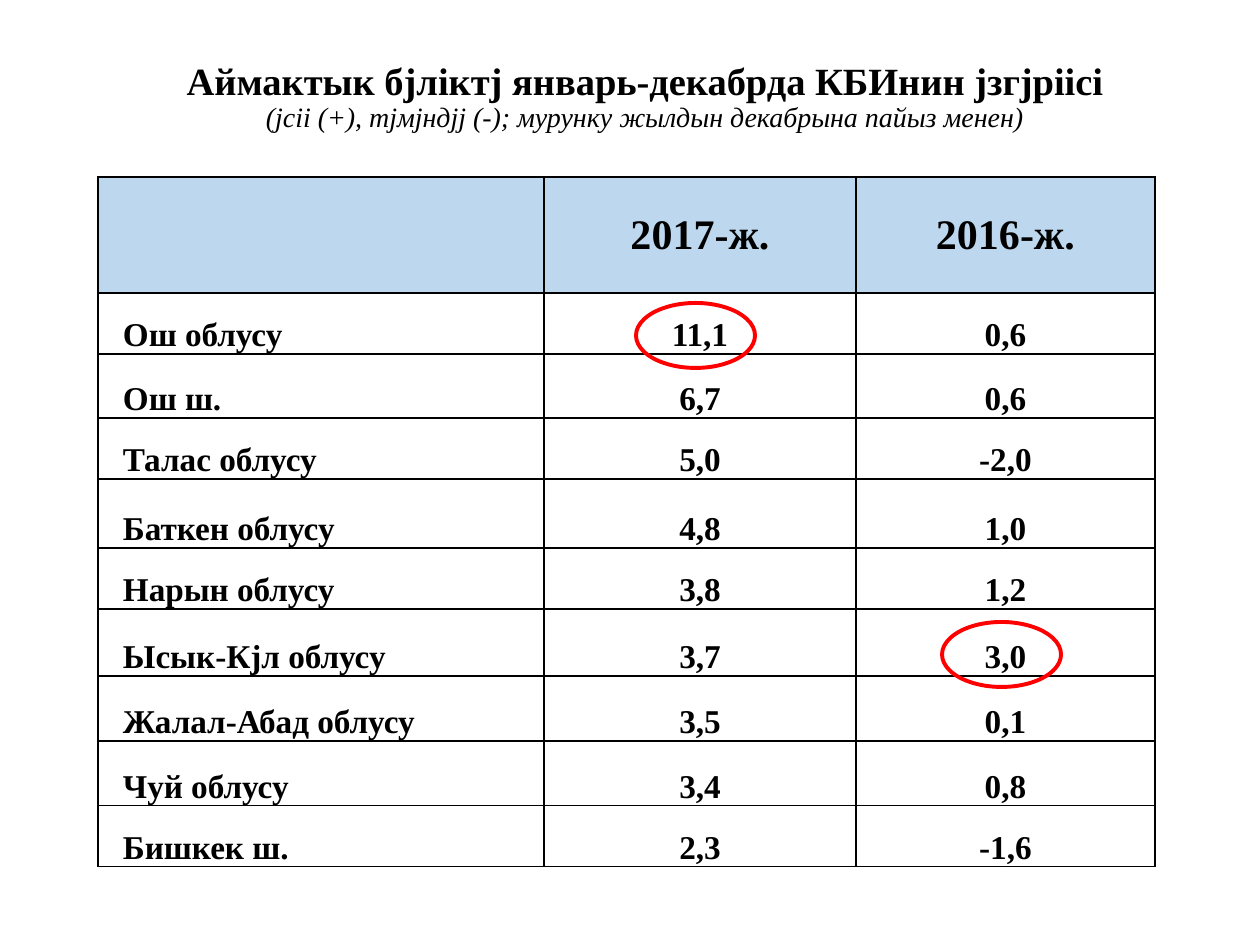
"""Build a slide with a regional CPI table and two highlighted values."""
from dataclasses import dataclass

from lxml import etree
from pptx import Presentation
from pptx import util as u
from pptx.dml.color import RGBColor
from pptx.enum import shapes, text
from pptx.oxml.ns import qn


@dataclass(frozen=True)
class Theme:
    font: str = "Times New Roman"
    ink: str = "000000"
    header: str = "BDD7EE"
    accent: str = "FF0000"
    title: int = 22
    subtitle: int = 16
    head: int = 24
    body: int = 19
    border: float = 1
    ring: float = 2.25


T = Theme()
COLS = [446, 312, 299]
ROWS = [116, 61, 64, 61, 69, 61, 67, 65, 65, 61]
DATA = [
    ("", "2017-ж.", "2016-ж."),
    ("Ош облусу", "11,1", "0,6"),
    ("Ош ш.", "6,7", "0,6"),
    ("Талас облусу", "5,0", "-2,0"),
    ("Баткен облусу", "4,8", "1,0"),
    ("Нарын облусу", "3,8", "1,2"),
    ("Ысык-Кјл облусу", "3,7", "3,0"),
    ("Жалал-Абад облусу", "3,5", "0,1"),
    ("Чуй облусу", "3,4", "0,8"),
    ("Бишкек ш.", "2,3", "-1,6"),
]


def px(n):
    return u.Emu(round(n * 914400 / 126))


def style(font, size, bold=True, italic=False):
    font.name, font.size = T.font, u.Pt(size)
    font.bold, font.italic = bold, italic
    font.color.rgb = RGBColor.from_string(T.ink)


def add_title(s, box, heading, note):
    sp = s.shapes.title
    sp.left, sp.top, sp.width, sp.height = map(px, box)
    tf = sp.text_frame
    tf.word_wrap = True
    tf.auto_size = text.MSO_AUTO_SIZE.NONE
    tf.vertical_anchor = text.MSO_ANCHOR.MIDDLE
    p = tf.paragraphs[0]
    p.alignment, p.line_spacing = text.PP_ALIGN.CENTER, 0.9
    r = p.add_run()
    r.text = heading
    style(r.font, T.title)
    p.add_line_break()
    r = p.add_run()
    r.text = note
    style(r.font, T.subtitle, bold=False, italic=True)


def set_borders(cell):
    tc_pr = cell._tc.get_or_add_tcPr()
    for i, side in enumerate(("lnL", "lnR", "lnT", "lnB")):
        ln = etree.Element(qn(f"a:{side}"), w=str(u.Pt(T.border)))
        fill = etree.SubElement(ln, qn("a:solidFill"))
        etree.SubElement(fill, qn("a:srgbClr"), val=T.ink)
        tc_pr.insert(i, ln)


def fill_cell(cell, value, is_head, is_label):
    cell.text = value
    p = cell.text_frame.paragraphs[0]
    style(p.font, T.head if is_head else T.body)
    p.alignment = text.PP_ALIGN.LEFT if is_label else text.PP_ALIGN.CENTER
    if is_head:
        cell.vertical_anchor = text.MSO_ANCHOR.MIDDLE
        cell.fill.solid()
        cell.fill.fore_color.rgb = RGBColor.from_string(T.header)
    else:
        cell.vertical_anchor = text.MSO_ANCHOR.BOTTOM
        cell.margin_left = px(25 if is_label else 0)
        cell.margin_right = cell.margin_top = cell.margin_bottom = 0
        p.space_after = u.Pt(2)
        cell.fill.background()
    set_borders(cell)


def add_table(s, left, top):
    frame = s.shapes.add_table(len(ROWS), len(COLS), px(left), px(top),
                               px(sum(COLS)), px(sum(ROWS)))
    table = frame.table
    table.first_row = table.horz_banding = False
    for col, width in zip(table.columns, COLS):
        col.width = px(width)
    for row, height in zip(table.rows, ROWS):
        row.height = px(height)
    for i, values in enumerate(DATA):
        for j, value in enumerate(values):
            fill_cell(table.cell(i, j), value, i == 0, j == 0)


def add_ring(s, left, top, width, height):
    sp = s.shapes.add_shape(shapes.MSO_SHAPE.OVAL,
                            *map(px, (left, top, width, height)))
    sp.shadow.inherit = False
    sp.fill.background()
    sp.line.color.rgb = RGBColor.from_string(T.accent)
    sp.line.width = u.Pt(T.ring)


def main():
    prs = Presentation()
    prs.slide_width, prs.slide_height = px(1260), px(945)
    s = prs.slides.add_slide(prs.slide_layouts[5])
    add_title(s, (78, 54, 1134, 88),
              "Аймактык бјліктј январь-декабрда КБИнин јзгјріісі",
              "(јсіі (+), тјмјндјј (-); мурунку жылдын декабрына пайыз менен)")
    add_table(s, 98, 177)
    for left, top in ((636, 303), (942, 622)):
        add_ring(s, left, top, 119, 65)
    prs.save("out.pptx")


if __name__ == "__main__":
    main()
